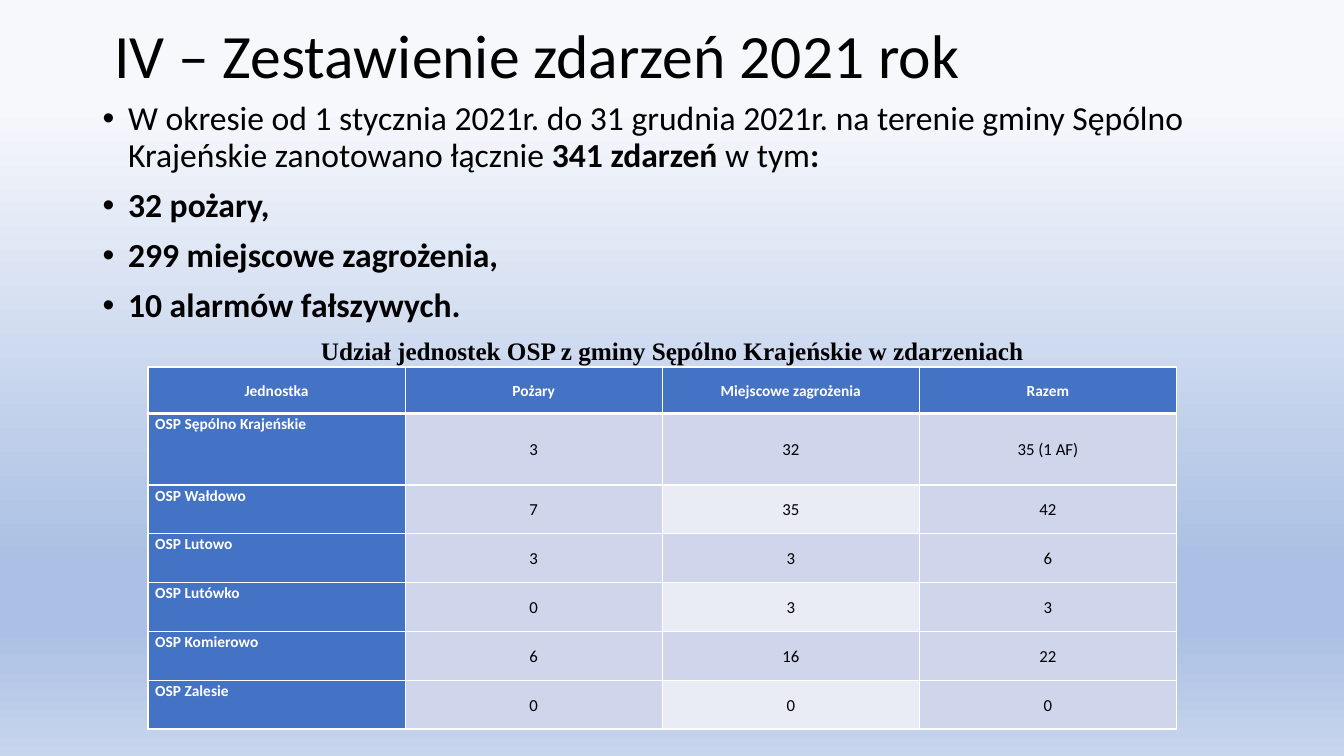
"""Build the slide that summarises fire brigade call-outs in 2021."""
import lxml.etree
import pptx
import pptx.dml.color
import pptx.enum.dml
import pptx.enum.text
import pptx.oxml.ns
import pptx.util

Cm = pptx.util.Cm
Pt = pptx.util.Pt
RGBColor = pptx.dml.color.RGBColor
Align = pptx.enum.text.PP_ALIGN
Anchor = pptx.enum.text.MSO_ANCHOR
qn = pptx.oxml.ns.qn

BLACK = RGBColor(0x00, 0x00, 0x00)
WHITE = RGBColor(0xFF, 0xFF, 0xFF)
BLUE = RGBColor(0x44, 0x72, 0xC4)
BAND = RGBColor(0xCF, 0xD5, 0xEA)
PALE_BAND = RGBColor(0xE9, 0xEB, 0xF5)
SKY_TOP = RGBColor(0xF6, 0xF8, 0xFC)
SKY_DEEP = RGBColor(0xAB, 0xC0, 0xE4)
SKY_BOTTOM = RGBColor(0xC7, 0xD5, 0xED)

SKY_STOPS = [(14, SKY_TOP), (74, SKY_DEEP), (83, SKY_DEEP), (100, SKY_BOTTOM)]
BULLETS = [
    [("W okresie od 1 stycznia 2021r. do 31 grudnia 2021r. na terenie gminy "
      "Sępólno Krajeńskie zanotowano łącznie ", False),
     ("341 zdarzeń ", True), ("w tym", False), (":", True)],
    [("32 pożary,", True)],
    [("299 miejscowe zagrożenia,", True)],
    [("10 alarmów fałszywych.", True)],
]
CAPTION = "Udział jednostek OSP z gminy Sępólno Krajeńskie w zdarzeniach"
UNITS = [
    ("Jednostka", "Pożary", "Miejscowe zagrożenia", "Razem"),
    ("OSP Sępólno Krajeńskie", "3", "32", "35 (1 AF)"),
    ("OSP Wałdowo", "7", "35", "42"),
    ("OSP Lutowo", "3", "3", "6"),
    ("OSP Lutówko", "0", "3", "3"),
    ("OSP Komierowo", "6", "16", "22"),
    ("OSP Zalesie", "0", "0", "0"),
]
ROW_HEIGHTS = [1.17, 1.8] + [1.23] * 5

BODY_PARA = {"line_spacing": 0.9, "space_before": Pt(10)}
LABEL_PARA = {"line_spacing": 1.07, "space_after": Pt(8)}
VALUE_PARA = {"line_spacing": 1.07, "alignment": Align.CENTER}
LABEL_FONT = {"size": Pt(11), "bold": True}
VALUE_FONT = {"size": Pt(12), "bold": False}


def apply_format(target, values):
    for name, value in values.items():
        setattr(target, name, value)


def add_span(para, text, color, values):
    span = para.add_run()
    span.text = text
    apply_format(span.font, {"name": "Calibri", **values})
    span.font.color.rgb = color


deck = pptx.Presentation()
deck.slide_width, deck.slide_height = Cm(33.87), Cm(19.05)
page = deck.slides.add_slide(deck.slide_layouts[5])

sky = page.background.fill
sky.gradient()
sky.gradient_angle = 270
stop_list = next(page.element.iter(qn("a:gsLst")))
for stop in list(stop_list):
    stop_list.remove(stop)
for percent, color in SKY_STOPS:
    stop = lxml.etree.SubElement(stop_list, qn("a:gs"), pos=str(percent * 1000))
    lxml.etree.SubElement(stop, qn("a:srgbClr"), val=str(color))

title = page.shapes.title
apply_format(title, {"left": Cm(2.62), "top": Cm(0.13), "width": Cm(29.21), "height": Cm(2.67)})
apply_format(title.text_frame, {"vertical_anchor": Anchor.MIDDLE, "word_wrap": True,
                                "auto_size": pptx.enum.text.MSO_AUTO_SIZE.NONE})
para = title.text_frame.paragraphs[0]
apply_format(para, {"alignment": Align.LEFT, "line_spacing": 0.9})
add_span(para, "IV – Zestawienie zdarzeń 2021 rok", BLACK, {"size": Pt(44)})

summary = page.shapes.add_textbox(Cm(2.34), Cm(2.44), Cm(29.21), Cm(15.93)).text_frame
summary.word_wrap = True
for index, spans in enumerate(BULLETS):
    para = summary.add_paragraph() if index else summary.paragraphs[0]
    apply_format(para, BODY_PARA)
    for text, bold in spans:
        add_span(para, text, BLACK, {"size": Pt(24), "bold": bold})
    settings = para._p.get_or_add_pPr()
    settings.set("marL", str(Cm(0.64)))
    settings.set("indent", str(-Cm(0.64)))
    lxml.etree.SubElement(settings, qn("a:buFont"), typeface="Arial")
    lxml.etree.SubElement(settings, qn("a:buChar"), char="•")
para = summary.add_paragraph()
apply_format(para, {**BODY_PARA, "alignment": Align.CENTER})
add_span(para, CAPTION, BLACK, {"name": "Times New Roman", "size": Pt(18), "bold": True})

table = page.shapes.add_table(len(UNITS), len(UNITS[0]), Cm(3.73), Cm(9.25),
                              Cm(25.92), Cm(sum(ROW_HEIGHTS))).table
table.horz_banding = False
for column in table.columns:
    column.width = Cm(6.48)
for row_index, (values, height) in enumerate(zip(UNITS, ROW_HEIGHTS)):
    table.rows[row_index].height = Cm(height)
    for column_index, text in enumerate(values):
        cell = table.cell(row_index, column_index)
        is_header = row_index == 0
        is_label = is_header or column_index == 0
        is_pale = column_index == 2 and row_index > 0 and row_index % 2 == 0
        is_unit = column_index == 0 and not is_header
        apply_format(cell, {"margin_left": Cm(0.18), "margin_right": Cm(0.18),
                            "margin_top": 0, "margin_bottom": 0,
                            "vertical_anchor": Anchor.TOP if is_unit else Anchor.MIDDLE})
        for side in ("L", "R", "T", "B"):
            is_thick = (row_index, side) in ((0, "B"), (1, "T"))
            border = lxml.etree.SubElement(cell._tc.get_or_add_tcPr(), qn(f"a:ln{side}"),
                                           w=str(Pt(3 if is_thick else 1)))
            paint = lxml.etree.SubElement(border, qn("a:solidFill"))
            lxml.etree.SubElement(paint, qn("a:srgbClr"), val=str(WHITE))
        cell.fill.solid()
        cell.fill.fore_color.rgb = BLUE if is_label else PALE_BAND if is_pale else BAND
        para = cell.text_frame.paragraphs[0]
        apply_format(para, LABEL_PARA if is_label else VALUE_PARA)
        para.alignment = Align.LEFT if is_unit else Align.CENTER
        add_span(para, text, WHITE if is_label else BLACK,
                 LABEL_FONT if is_label else VALUE_FONT)

deck.save("out.pptx")
